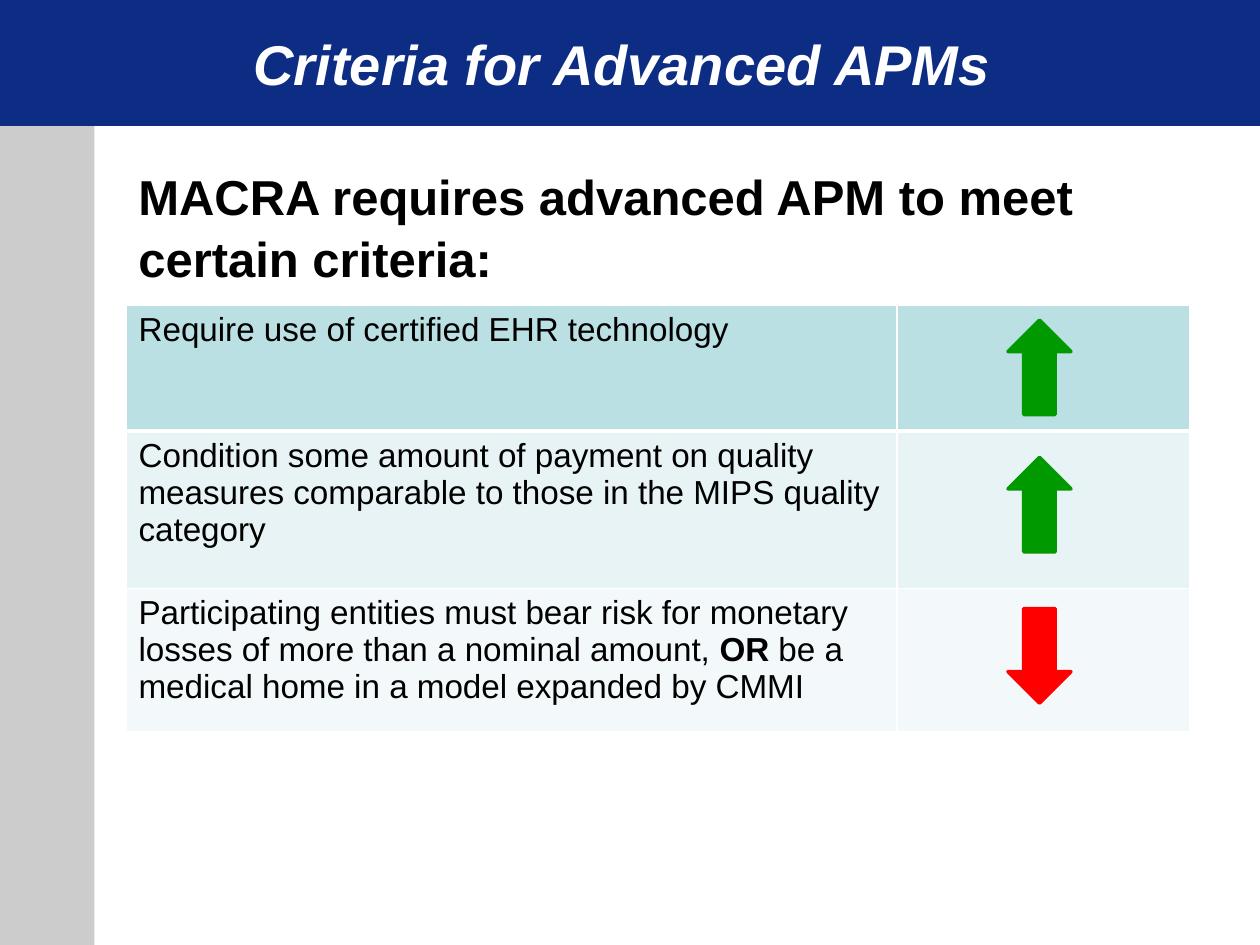
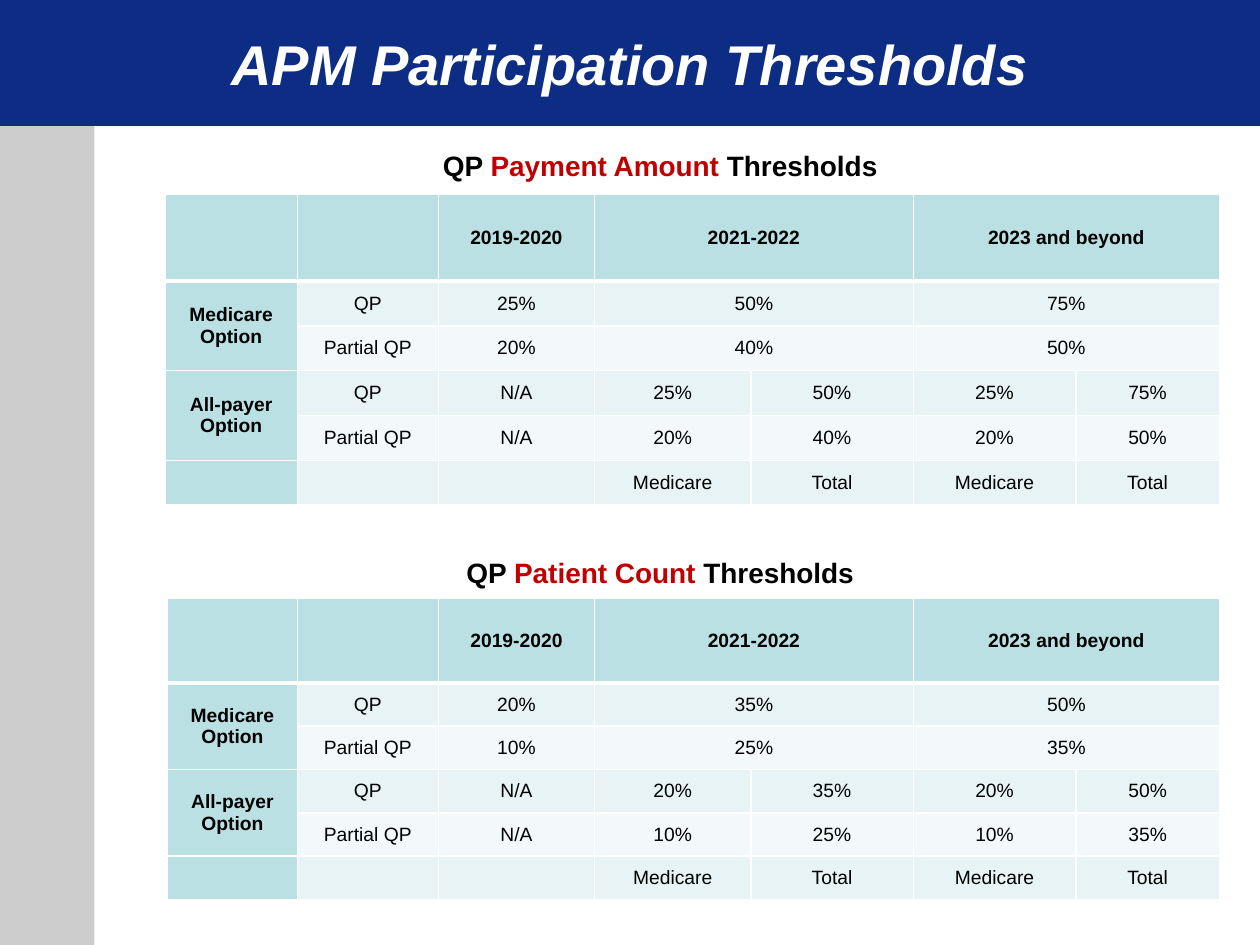
import lxml.etree
import pptx
import pptx.dml.color
import pptx.enum.shapes
import pptx.enum.text
import pptx.oxml.ns
import pptx.util

Inches, Pt = pptx.util.Inches, pptx.util.Pt
SHAPES = pptx.enum.shapes.MSO_SHAPE
ALIGN = pptx.enum.text.PP_ALIGN
MIDDLE = pptx.enum.text.MSO_ANCHOR.MIDDLE

# Content: styled text is a list of (words, font settings) pairs
CRITERIA_TITLE = "Criteria for Advanced APMs "
CRITERIA_LEAD = "MACRA requires advanced APM to meet certain criteria:"
# text, row height, arrow, arrow top within the row
CRITERIA = [
    ([("Require use of certified EHR technology", {})], 1.0, "up", 0.12),
    ([("Condition some amount of payment on quality measures comparable "
       "to those in the MIPS quality category", {})], 1.25, "up", 0.21),
    ([("Participating entities must bear risk for monetary losses of more "
       "than a nominal amount, ", {}),
      ("OR", {"bold": True}),
      (" be a medical home in a model expanded by CMMI", {})], 1.14, "down", 0.16),
]

THRESHOLDS_TITLE = "APM Participation Thresholds"
LEFT, ABOVE = "<", "^"  # the cell merges with its left or upper neighbour
HEADINGS = ["", "", "2019-2020", "2021-2022", LEFT, "2023 and beyond", LEFT]
ROW_LABELS = [("Medicare Option", "QP"), (ABOVE, "Partial QP"),
              ("All-payer Option", "QP"), (ABOVE, "Partial QP"), ("", "")]
SHARE_LABELS = ["", "Medicare", "Total", "Medicare", "Total"]
THRESHOLDS = [
    {"subject": "Payment Amount ", "caption_top": 1.13, "box": (1.31, 1.54, 8.37, 2.47),
     "header": 0.69,
     "values": [["25%", "50%", LEFT, "75%", LEFT],
                ["20%", "40%", LEFT, "50%", LEFT],
                ["N/A", "25%", "50%", "25%", "75%"],
                ["N/A", "20%", "40%", "20%", "50%"]]},
    {"subject": "Patient Count ", "caption_top": 4.36, "box": (1.33, 4.75, 8.35, 2.39),
     "header": 0.67,
     "values": [["20%", "35%", LEFT, "50%", LEFT],
                ["10%", "25%", LEFT, "35%", LEFT],
                ["N/A", "20%", "35%", "20%", "50%"],
                ["N/A", "10%", "25%", "10%", "35%"]]},
]

# Layout, in inches
WIDTH, HEIGHT = 10, 7.5
BAND_HEIGHT, SIDEBAR_WIDTH = 1, 0.75
CRITERIA_LEFT, CRITERIA_TOP, CRITERIA_COLUMNS = 1, 2.42, [6.12, 2.32]
ARROW_LEFT, ARROW_WIDTH, ARROW_HEIGHT = 8, 0.5, 0.75
CAPTION_CENTRE, CAPTION_WIDTH, CAPTION_HEIGHT = 5.24, 3.7, 0.37
VALUE_COLUMNS = [1.12, 1.24, 1.24, 1.29, 1.29, 1.14]


class Theme:
    font = "Arial"
    band, sidebar = "0C2D83", "CCCCCC"
    white, black, accent = "FFFFFF", "000000", "C00000"
    header, stripes = "BBE0E3", ("E7F3F4", "F3F9FA")
    arrows = {"up": (SHAPES.UP_ARROW, "009900"), "down": (SHAPES.DOWN_ARROW, "FF0000")}
    title, lead, caption, criterion, value = 32, 28, 16, 19, 11
    border, header_border = 1, 3


def rgb(colour):
    return pptx.dml.color.RGBColor.from_string(colour)


def style_font(font, size=None, colour=None, bold=None, italic=None):
    if size:
        font.name, font.size = Theme.font, Pt(size)
    if colour:
        font.color.rgb = rgb(colour)
    if bold is not None:
        font.bold = bold
    if italic is not None:
        font.italic = italic


def write(frame, runs, size, colour=Theme.black, bold=False, italic=False, align=ALIGN.LEFT):
    paragraph = frame.paragraphs[0]
    paragraph.alignment = align
    style_font(paragraph.font, size, colour, bold, italic)
    for words, changes in runs:
        run = paragraph.add_run()
        run.text = words
        style_font(run.font, **changes)
    return paragraph


def add_filled(slide, kind, box, colour, line_width=0):
    shape = slide.shapes.add_shape(kind, *map(Inches, box))
    shape.shadow.inherit = False
    shape.fill.solid()
    shape.fill.fore_color.rgb = rgb(colour)
    if line_width:
        shape.line.color.rgb = rgb(colour)
        shape.line.width = Pt(line_width)
    else:
        shape.line.fill.background()
    return shape


def add_text(slide, box, runs, size, **style):
    frame = slide.shapes.add_textbox(*map(Inches, box)).text_frame
    frame.word_wrap = True
    return write(frame, runs, size, **style)


def add_bands(slide, layout):
    """Put the title band and sidebar on the layout that the slides share."""
    bands = [((0, 0, WIDTH, BAND_HEIGHT), Theme.band),
             ((0, BAND_HEIGHT, SIDEBAR_WIDTH, HEIGHT - BAND_HEIGHT), Theme.sidebar)]
    for box, colour in bands:
        shape = add_filled(slide, SHAPES.RECTANGLE, box, colour)
        layout.shapes._spTree.insert(2, shape._element)


def add_slide(presentation, layout, title_text):
    slide = presentation.slides.add_slide(layout)
    title = slide.shapes.title
    title.left = title.top = 0
    title.width, title.height = Inches(WIDTH), Inches(BAND_HEIGHT)
    title.text_frame.vertical_anchor = MIDDLE
    write(title.text_frame, [(title_text, {})], Theme.title, Theme.white,
          bold=True, italic=True, align=ALIGN.CENTER)
    return slide


def format_cell(cell, colour, edge_widths):
    """Fill the cell and draw white edges; edge_widths maps edge tags to points."""
    properties = cell._tc.get_or_add_tcPr()
    for edge, width in edge_widths.items():
        line = lxml.etree.SubElement(properties, pptx.oxml.ns.qn(f"a:{edge}"),
                                     w=str(Pt(width)))
        fill = lxml.etree.SubElement(line, pptx.oxml.ns.qn("a:solidFill"))
        lxml.etree.SubElement(fill, pptx.oxml.ns.qn("a:srgbClr"), val=Theme.white)
    cell.fill.solid()
    cell.fill.fore_color.rgb = rgb(colour)


def add_table(slide, left, top, columns, rows, header_column):
    table = slide.shapes.add_table(
        len(rows), len(columns), *map(Inches, (left, top, sum(columns), sum(rows)))).table
    table.first_row = table.horz_banding = False
    for column, width in zip(table.columns, columns):
        column.width = Inches(width)
    for number, (row, height) in enumerate(zip(table.rows, rows)):
        row.height = Inches(height)
        for position, cell in enumerate(row.cells):
            is_header = number == 0 or (header_column and position == 0)
            colour = Theme.header if is_header else Theme.stripes[(number - 1) % 2]
            edges = dict.fromkeys(("lnL", "lnR", "lnT", "lnB"), Theme.border)
            if number == 0:
                edges["lnB"] = Theme.header_border
            elif number == 1:
                edges["lnT"] = Theme.header_border
            format_cell(cell, colour, edges)
    return table


def add_criteria(slide):
    heights = [height for _, height, _, _ in CRITERIA]
    add_text(slide, (CRITERIA_LEFT, 1.25, sum(CRITERIA_COLUMNS), 1.1),
             [(CRITERIA_LEAD, {})], Theme.lead, bold=True).line_spacing = 1.05
    table = add_table(slide, CRITERIA_LEFT, CRITERIA_TOP, CRITERIA_COLUMNS, heights, False)
    for number, (runs, _, direction, offset) in enumerate(CRITERIA):
        write(table.cell(number, 0).text_frame, runs, Theme.criterion)
        kind, colour = Theme.arrows[direction]
        arrow_top = CRITERIA_TOP + sum(heights[:number]) + offset
        add_filled(slide, kind, (ARROW_LEFT, arrow_top, ARROW_WIDTH, ARROW_HEIGHT),
                   colour, line_width=2)


def add_thresholds(slide, group):
    caption = [("QP ", {}), (group["subject"], {"colour": Theme.accent}), ("Thresholds", {})]
    add_text(slide, (CAPTION_CENTRE - CAPTION_WIDTH / 2, group["caption_top"],
                     CAPTION_WIDTH, CAPTION_HEIGHT),
             caption, Theme.caption, bold=True, align=ALIGN.CENTER)

    body = [[*labels, *values]
            for labels, values in zip(ROW_LABELS, group["values"] + [SHARE_LABELS])]
    left, top, width, height = group["box"]
    columns = [width - sum(VALUE_COLUMNS), *VALUE_COLUMNS]
    row_height = (height - group["header"]) / len(body)
    rows = [group["header"]] + [row_height] * len(body)
    table = add_table(slide, left, top, columns, rows, True)
    for number, texts in enumerate([HEADINGS, *body]):
        for position, text in enumerate(texts):
            cell = table.cell(number, position)
            cell.margin_left = cell.margin_right = Inches(0.07)
            cell.margin_top = cell.margin_bottom = 0
            cell.vertical_anchor = MIDDLE
            if text == LEFT:
                table.cell(number, position - 1).merge(cell)
            elif text == ABOVE:
                table.cell(number - 1, position).merge(cell)
            elif text:
                write(cell.text_frame, [(text, {})], Theme.value,
                      bold=number == 0 or position == 0, align=ALIGN.CENTER)


def main():
    presentation = pptx.Presentation()
    presentation.slide_width, presentation.slide_height = Inches(WIDTH), Inches(HEIGHT)
    layout = presentation.slide_layouts.get_by_name("Title Only")

    criteria_slide = add_slide(presentation, layout, CRITERIA_TITLE)
    add_bands(criteria_slide, layout)
    add_criteria(criteria_slide)

    thresholds_slide = add_slide(presentation, layout, THRESHOLDS_TITLE)
    for group in THRESHOLDS:
        add_thresholds(thresholds_slide, group)

    presentation.save("out.pptx")


if __name__ == "__main__":
    main()
